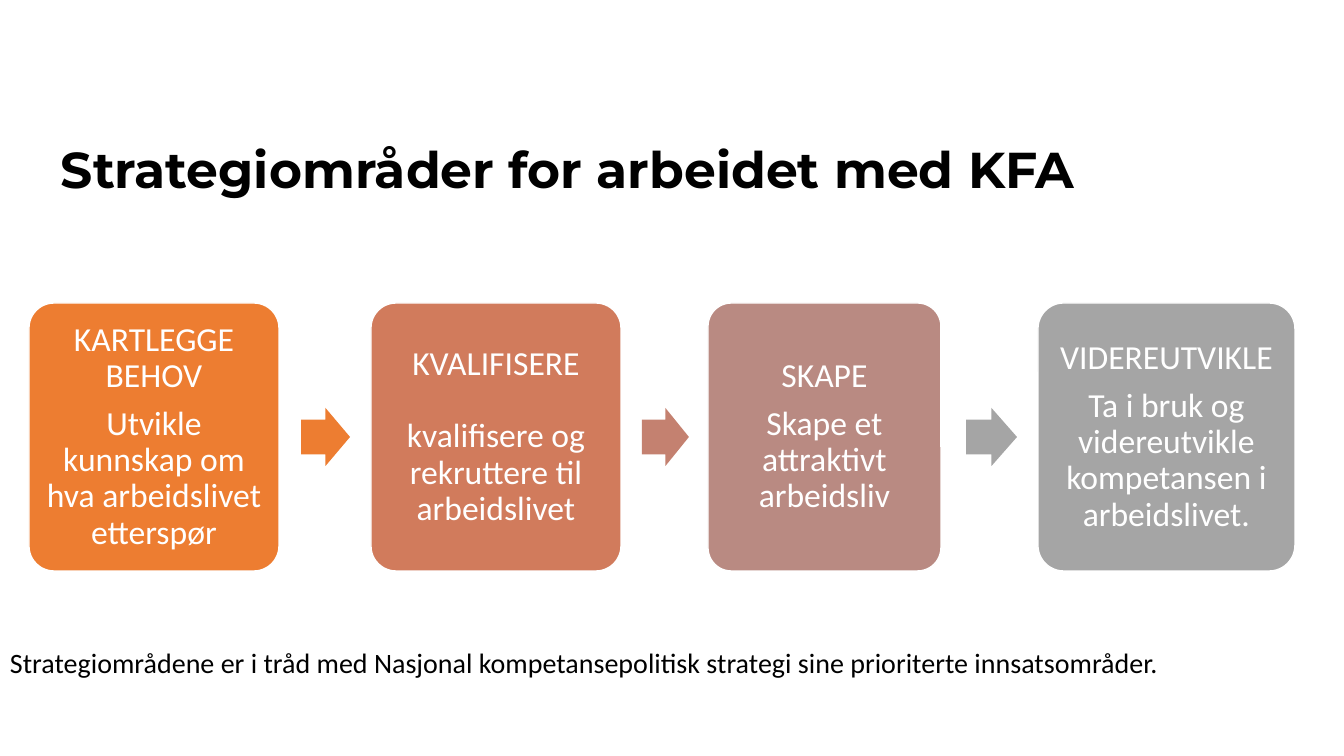
from pptx import Presentation
from pptx.dml.color import RGBColor
from pptx.enum.shapes import MSO_SHAPE as Shape
from pptx.enum.text import MSO_ANCHOR as Anchor, PP_ALIGN as Align
from pptx.util import Emu, Pt


def px(pixels):
    return Emu(round(pixels * 914400 / 100.8))


def color(hex_string):
    return RGBColor.from_string(hex_string)


deck = Presentation()
deck.slide_width, deck.slide_height = px(1344), px(756)
slide = deck.slides.add_slide(deck.slide_layouts[6])

areas = [
    (29, 250, "ED7D31", 8, "KARTLEGGE BEHOV", "Utvikle kunnskap om hva arbeidslivet etterspør"),
    (371, 250, "D17B5C", 26, "KVALIFISERE", "kvalifisere og rekruttere til arbeidslivet"),
    (708, 233, "B98A82", 8, "SKAPE", "Skape et attraktivt arbeidsliv"),
    (1038, 257, "A5A5A5", 8, "VIDEREUTVIKLE", "Ta i bruk og videreutvikle kompetansen i arbeidslivet."),
]
for left, width, fill, gap, heading, goal in areas:
    area = slide.shapes.add_shape(Shape.ROUNDED_RECTANGLE, px(left), px(303), px(width), px(268))
    area.adjustments[0] = 0.1
    area.shadow.inherit = False
    area.fill.solid()
    area.fill.fore_color.rgb = color(fill)
    area.line.color.rgb = color("FFFFFF")
    area.line.width = Pt(1)
    frame = area.text_frame
    frame.word_wrap = True
    frame.vertical_anchor = Anchor.MIDDLE
    frame.margin_left = frame.margin_right = px(10)
    frame.margin_top = frame.margin_bottom = px(10)
    frame.text = f"{heading}\n{goal}"
    for paragraph in frame.paragraphs:
        paragraph.alignment = Align.CENTER
        paragraph.line_spacing = 0.9
        paragraph.font.name = "Calibri"
        paragraph.font.size = Pt(24)
        paragraph.font.color.rgb = color("FFFFFF")
    frame.paragraphs[1].space_before = Pt(gap)

for left, width, fill in [(301, 49, "ED7D31"), (642, 47, "C48170"), (966, 51, "A5A5A5")]:
    step = slide.shapes.add_shape(Shape.RIGHT_ARROW, px(left), px(408), px(width), px(58))
    step.adjustments[0] = 0.6
    step.adjustments[1] = 0.5
    step.shadow.inherit = False
    step.fill.solid()
    step.fill.fore_color.rgb = color(fill)
    step.line.fill.background()

captions = [
    (51, 139, 93, "Montserrat", 36, True, "Strategiområder for arbeidet med KFA"),
    (0, 620, 120, "Calibri", 20, False,
     "Strategiområdene er i tråd med Nasjonal kompetansepolitisk strategi sine prioriterte innsatsområder."),
]
for left, top, height, font, size, bold, wording in captions:
    caption = slide.shapes.add_textbox(px(left), px(top), px(1281), px(height)).text_frame
    caption.word_wrap = True
    caption.text = wording
    paragraph = caption.paragraphs[0]
    paragraph.line_spacing = Pt(39)
    paragraph.font.name = font
    paragraph.font.size = Pt(size)
    paragraph.font.bold = bold
    paragraph.font.color.rgb = color("000000")

deck.save("out.pptx")
